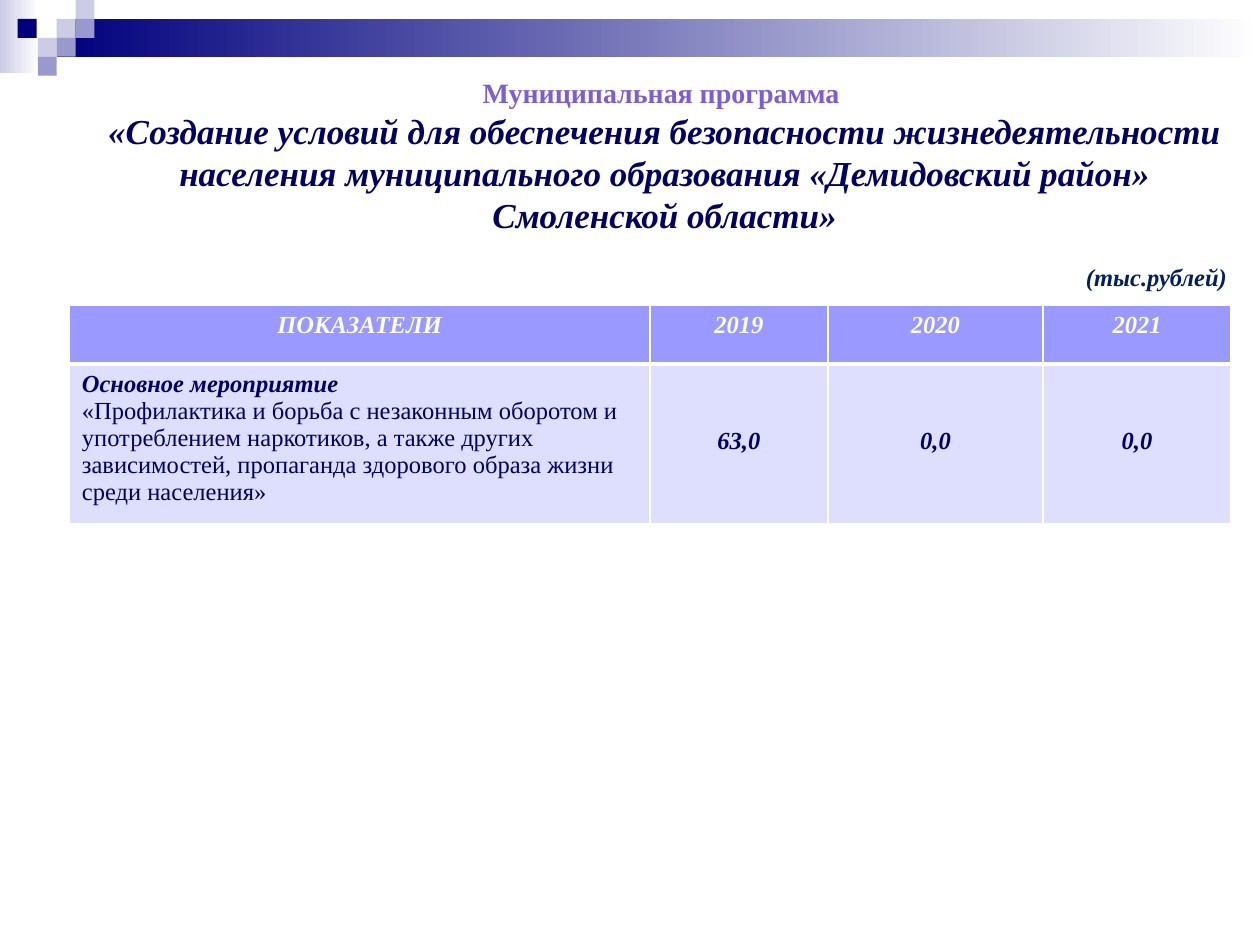
from lxml import etree
from pptx import Presentation
from pptx.dml.color import RGBColor
from pptx.enum import shapes, text
from pptx.oxml import ns
from pptx.util import Inches, Pt

NAVY = RGBColor(0x00, 0x00, 0x7D)
INK = RGBColor(0x00, 0x00, 0x66)
DEEP_BLUE = RGBColor(0x00, 0x20, 0x60)
VIOLET = RGBColor(0x7D, 0x5C, 0xDA)
PALE = RGBColor(0xCC, 0xCC, 0xE6)
MUTED = RGBColor(0x99, 0x99, 0xCC)
HEADER_FILL = RGBColor(0x99, 0x99, 0xFF)
BODY_FILL = RGBColor(0xDE, 0xDE, 0xFF)
WHITE = RGBColor(0xFF, 0xFF, 0xFF)
FONT = "Times New Roman"

# Left, top, width, height, start colour
GRADIENT_BARS = [(0, 0, 0.31, 0.58, PALE), (0.45, 0.15, 9.55, 0.3, NAVY)]
SQUARE = 0.15
SQUARES = [
    (0.45, 0.15, PALE), (0.6, 0, PALE), (0.6, 0.15, MUTED), (0.3, 0.3, PALE),
    (0.14, 0.15, NAVY), (0.45, 0.3, MUTED), (0.3, 0.45, MUTED),
]

# Each line: words, size, colour, bold, italic
TITLE = [
    ("Муниципальная программа ", 16, VIOLET, True, False),
    ("«Создание условий для обеспечения безопасности жизнедеятельности "
     "населения муниципального образования «Демидовский район» Смоленской "
     "области»", 20, INK, True, True),
]
UNITS = [("(тыс.рублей)", 14, DEEP_BLUE, True, True)]
HEADERS = ["ПОКАЗАТЕЛИ", "2019", "2020", "2021"]
MEASURE = [
    ("Основное мероприятие", 14, INK, True, True),
    ("«Профилактика и борьба с незаконным оборотом и употреблением "
     "наркотиков, а также других зависимостей, пропаганда здорового образа "
     "жизни среди населения»", 14, INK, False, False),
]
VALUES = ["63,0", "0,0", "0,0"]
COLUMN_WIDTHS = [4.61, 1.41, 1.71, 1.49]
ROW_HEIGHTS = [0.47, 1.26]


def write_lines(frame, lines, align):
    for i, (words, size, colour, bold, italic) in enumerate(lines):
        para = frame.add_paragraph() if i else frame.paragraphs[0]
        para.alignment = align
        span = para.add_run()
        span.text = words
        font = span.font
        font.name, font.size = FONT, Pt(size)
        font.bold, font.italic = bold, italic
        font.color.rgb = colour


def add_rect(page, left, top, width, height):
    box = page.shapes.add_shape(
        shapes.MSO_SHAPE.RECTANGLE,
        Inches(left), Inches(top), Inches(width), Inches(height))
    box.shadow.inherit = False
    box.line.fill.background()
    return box


def add_decoration(page):
    for left, top, width, height, colour in GRADIENT_BARS:
        fill = add_rect(page, left, top, width, height).fill
        fill.gradient()
        fill.gradient_angle = 0
        for stop, stop_colour in zip(fill.gradient_stops, (colour, WHITE)):
            stop.color.rgb = stop_colour
    for left, top, colour in SQUARES:
        fill = add_rect(page, left, top, SQUARE, SQUARE).fill
        fill.solid()
        fill.fore_color.rgb = colour


def set_borders(cell, widths):
    """Draw white borders; widths in points by side (L, R, T, B)."""
    props = cell._tc.get_or_add_tcPr()
    for side, width in widths.items():
        line = etree.SubElement(props, ns.qn(f"a:ln{side}"), w=str(Pt(width)))
        fill = etree.SubElement(line, ns.qn("a:solidFill"))
        etree.SubElement(fill, ns.qn("a:srgbClr"), val=str(WHITE))


def add_measures_table(page):
    table = page.shapes.add_table(
        len(ROW_HEIGHTS), len(COLUMN_WIDTHS), Inches(0.55), Inches(2.42),
        Inches(sum(COLUMN_WIDTHS)), Inches(sum(ROW_HEIGHTS))).table
    for column, width in zip(table.columns, COLUMN_WIDTHS):
        column.width = Inches(width)
    for row, height in zip(table.rows, ROW_HEIGHTS):
        row.height = Inches(height)

    center = text.PP_ALIGN.CENTER
    for i, label in enumerate(HEADERS):
        write_lines(table.cell(0, i).text_frame,
                    [(label, 14, WHITE, True, True)], center)
    write_lines(table.cell(1, 0).text_frame, MEASURE, text.PP_ALIGN.LEFT)
    for i, value in enumerate(VALUES, start=1):
        cell = table.cell(1, i)
        cell.vertical_anchor = text.MSO_ANCHOR.MIDDLE
        cell.margin_bottom = Inches(0.1)
        write_lines(cell.text_frame, [(value, 14, INK, True, True)], center)

    rules = [(HEADER_FILL, {"L": 1, "R": 1, "T": 1, "B": 3}),
             (BODY_FILL, {"L": 1, "R": 1, "T": 3, "B": 1})]
    for row, (colour, widths) in zip(table.rows, rules):
        for cell in row.cells:
            set_borders(cell, widths)
            cell.fill.solid()
            cell.fill.fore_color.rgb = colour


def main():
    deck = Presentation()
    deck.slide_width, deck.slide_height = Inches(10), Inches(7.5)
    page = deck.slides.add_slide(deck.slide_layouts[5])
    add_decoration(page)

    title = page.shapes.title
    title.left, title.top = Inches(0.55), Inches(0.55)
    title.width, title.height = Inches(9.45), Inches(1.38)
    frame = title.text_frame
    frame.word_wrap = True
    frame.auto_size = text.MSO_AUTO_SIZE.SHAPE_TO_FIT_TEXT
    frame.vertical_anchor = text.MSO_ANCHOR.TOP
    write_lines(frame, TITLE, text.PP_ALIGN.CENTER)

    add_measures_table(page)

    units = page.shapes.add_textbox(
        Inches(8.52), Inches(2.03), Inches(1.33), Inches(0.34))
    units.text_frame.word_wrap = False
    units.text_frame.auto_size = text.MSO_AUTO_SIZE.SHAPE_TO_FIT_TEXT
    write_lines(units.text_frame, UNITS, text.PP_ALIGN.LEFT)

    deck.save("out.pptx")


if __name__ == "__main__":
    main()
